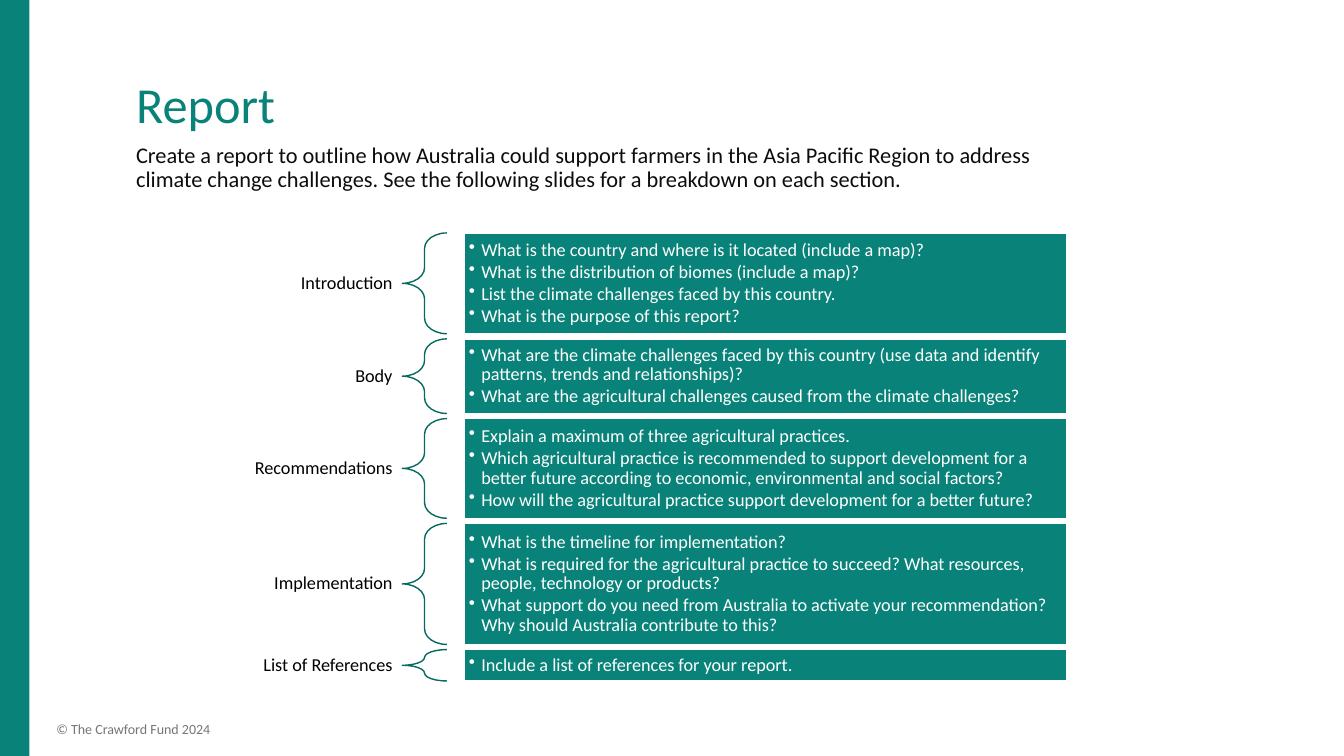
import pptx
import pptx.util
import pptx.dml.color
import pptx.enum.shapes
import pptx.enum.text
from lxml import etree

Cm, Pt = pptx.util.Cm, pptx.util.Pt
RGB = pptx.dml.color.RGBColor
KIND = pptx.enum.shapes.MSO_SHAPE
ALIGN = pptx.enum.text.PP_ALIGN
ANCHOR = pptx.enum.text.MSO_ANCHOR

TEAL = RGB(0x09, 0x83, 0x79)
DARK = RGB(0x07, 0x69, 0x61)
WHITE = RGB(0xFF, 0xFF, 0xFF)
BLACK = RGB(0x00, 0x00, 0x00)
INK = RGB(0x0D, 0x0D, 0x0D)
GREY = RGB(0x76, 0x76, 0x76)

ROWS = [
    ("Introduction", 2.54, [
        "What is the country and where is it located (include a map)?",
        "What is the distribution of biomes (include a map)?",
        "List the climate challenges faced by this country.",
        "What is the purpose of this report?"]),
    ("Body", 1.88, [
        "What are the climate challenges faced by this country (use data and "
        "identify patterns, trends and relationships)?",
        "What are the agricultural challenges caused from the climate challenges?"]),
    ("Recommendations", 2.51, [
        "Explain a maximum of three agricultural practices.",
        "Which agricultural practice is recommended to support development for "
        "a better future according to economic, environmental and social factors?",
        "How will the agricultural practice support development for a better future?"]),
    ("Implementation", 3.05, [
        "What is the timeline for implementation?",
        "What is required for the agricultural practice to succeed? What "
        "resources, people, technology or products?",
        "What support do you need from Australia to activate your "
        "recommendation? Why should Australia contribute to this?"]),
    ("List of References", 0.79, [
        "Include a list of references for your report."]),
]

deck = pptx.Presentation()
deck.slide_width, deck.slide_height = Cm(33.87), Cm(19.05)
slide = deck.slides.add_slide(deck.slide_layouts[6])


def add_part(kind, left, top, width, height):
    """Add a plain shape, or a text box when kind is None."""
    area = Cm(left), Cm(top), Cm(width), Cm(height)
    if kind is None:
        part = slide.shapes.add_textbox(*area)
    else:
        part = slide.shapes.add_shape(kind, *area)
        part.shadow.inherit = False
    return part


def write(part, lines, frame, bullet=False):
    """Write (text, size, colour, paragraph format) lines into a part."""
    body = part.text_frame
    for key, value in {"word_wrap": True, **frame}.items():
        setattr(body, key, value)
    for i, (text, size, color, form) in enumerate(lines):
        para = body.paragraphs[0] if i == 0 else body.add_paragraph()
        for key, value in form.items():
            setattr(para, key, value)
        if i == 0:
            para.space_before = Pt(0)
        if bullet:
            props = para._p.get_or_add_pPr()
            props.set("marL", str(Cm(0.31)))
            props.set("indent", str(-Cm(0.31)))
            mark = etree.SubElement(props, pptx.oxml.ns.qn("a:buChar"))
            mark.set("char", "•")
        run = para.add_run()
        run.text = text
        for key, value in {"name": "Calibri", "size": Pt(size)}.items():
            setattr(run.font, key, value)
        run.font.color.rgb = color


# Side band and footer
band = add_part(KIND.RECTANGLE, 0, 0, 0.74, 19.05)
band.fill.solid()
band.fill.fore_color.rgb = TEAL
band.line.fill.background()
foot = add_part(None, 1.17, 18.03, 17.4, 0.69)
write(foot, [("© The Crawford Fund 2024", 10, GREY, {})], {})

# Title and task
head = add_part(None, 3.18, 1.98, 24.64, 3)
write(head, [
    ("Report", 36, TEAL, {"line_spacing": 0.9, "space_after": Pt(7)}),
    ("Create a report to outline how Australia could support farmers in the "
     "Asia Pacific Region to address climate change challenges. See the "
     "following slides for a breakdown on each section.",
     16, INK, {"line_spacing": 0.9}),
], {"vertical_anchor": ANCHOR.BOTTOM})

# Report sections: label, brace and questions
GAP = 0.13
top = 5.87
label_form = {"alignment": ALIGN.RIGHT, "line_spacing": 0.9}
label_frame = {"vertical_anchor": ANCHOR.MIDDLE,
               "margin_top": Cm(0.1), "margin_bottom": Cm(0.1)}
item_form = {"alignment": ALIGN.LEFT, "line_spacing": 0.9, "space_before": Pt(1.7)}
item_frame = {"vertical_anchor": ANCHOR.MIDDLE}
for side in ("left", "right", "top", "bottom"):
    item_frame["margin_" + side] = Cm(0.13)

for name, height, items in ROWS:
    label = add_part(None, 4.55, top + height / 2 - 0.36, 5.59, 0.72)
    write(label, [(name, 13, BLACK, label_form)], label_frame)

    brace = add_part(KIND.LEFT_BRACE, 10.14, top, 1.12, height)
    brace.adjustments[0] = 0.35
    brace.fill.background()
    brace.line.color.rgb = DARK
    brace.line.width = Pt(1)

    box = add_part(KIND.RECTANGLE, 11.69, top, 15.19, height)
    box.fill.solid()
    box.fill.fore_color.rgb = TEAL
    box.line.color.rgb = WHITE
    box.line.width = Pt(1)
    write(box, [(item, 13, WHITE, item_form) for item in items], item_frame, True)
    top += height + GAP

deck.save("out.pptx")
